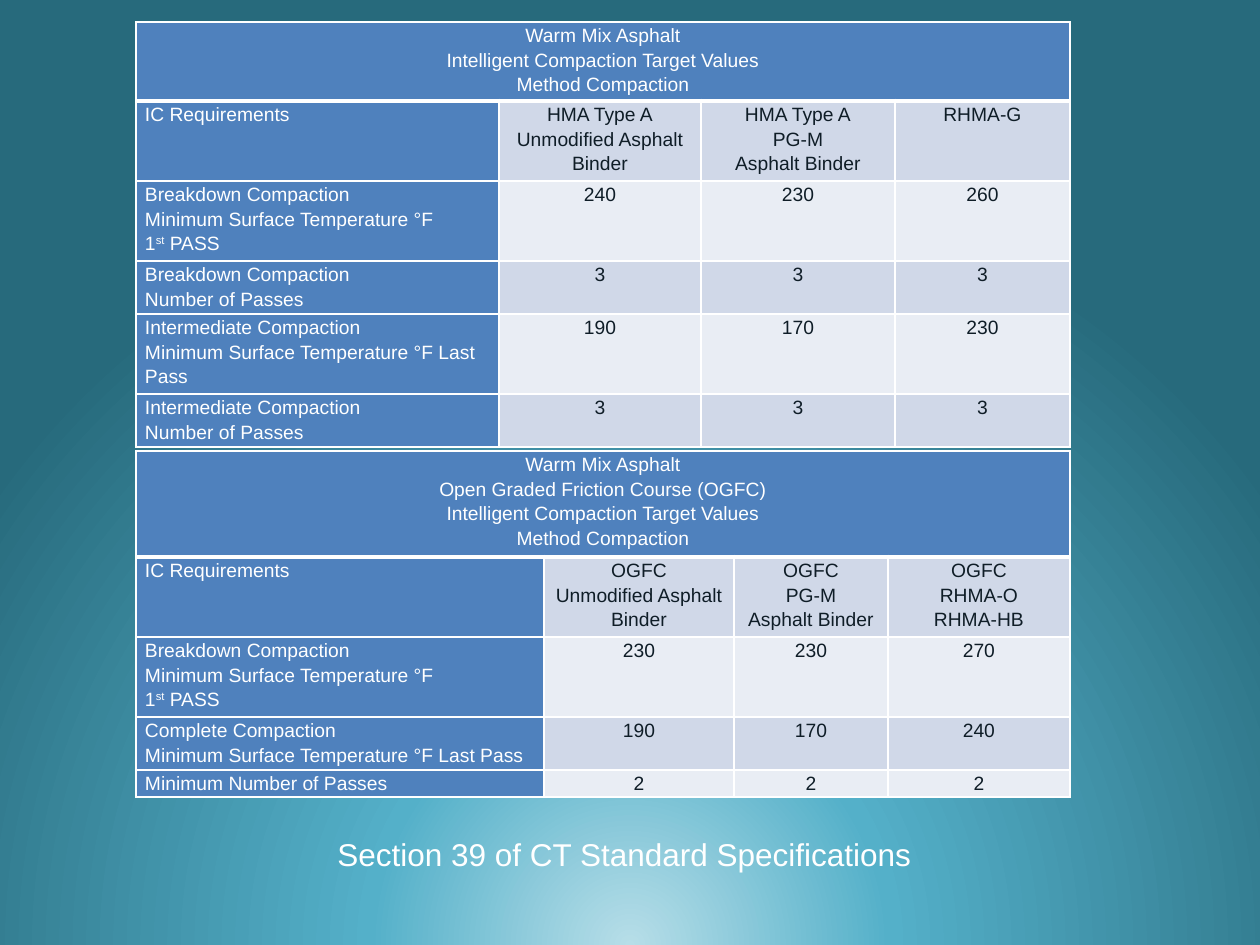
from pptx import Presentation
from pptx.dml.color import RGBColor
from pptx.enum.text import MSO_AUTO_SIZE, PP_ALIGN
from pptx.oxml import parse_xml
from pptx.util import Emu, Pt

CENTER, LEFT = PP_ALIGN.CENTER, PP_ALIGN.LEFT
GROW = MSO_AUTO_SIZE.SHAPE_TO_FIT_TEXT
NS = 'xmlns:a="http://schemas.openxmlformats.org/drawingml/2006/main"'
NS_P = 'xmlns:p="http://schemas.openxmlformats.org/presentationml/2006/main"'
EMU_PER_PX = 914400 / 126
FONT = "Arial"
COLORS = {
    "white": "FFFFFF", "ink": "0F1D27", "head": "4F81BD",
    "band_dark": "D0D8E8", "band_light": "E9EDF4",
    "glow": "B7DEE8", "mid": "54B0C9", "edge": "276A7C",
}
CELL_MARGINS = {"margin_left": 9, "margin_right": 9,
                "margin_top": 0, "margin_bottom": 0}

# Text between carets is superscript.
FIRST_PASS = "Breakdown Compaction\nMinimum Surface Temperature °F\n1^st^ PASS"
LAST_PASS = "Minimum Surface Temperature °F Last Pass"

COMPACTION = {
    "top": 22,
    "cols": [363, 202, 194, 175],
    "heights": [79, 80, 80, 53, 80, 53],
    "rows": [
        ["Warm Mix Asphalt\nIntelligent Compaction Target Values\nMethod Compaction"],
        ["IC Requirements", "HMA Type A\nUnmodified Asphalt Binder",
         "HMA Type A\nPG-M\nAsphalt Binder", "RHMA-G"],
        [FIRST_PASS, "240", "230", "260"],
        ["Breakdown Compaction\nNumber of Passes", "3", "3", "3"],
        ["Intermediate Compaction\n" + LAST_PASS, "190", "170", "230"],
        ["Intermediate Compaction\nNumber of Passes", "3", "3", "3"],
    ],
}
FRICTION_COURSE = {
    "top": 451,
    "cols": [408, 190, 154, 182],
    "heights": [106, 80, 80, 53, 27],
    "rows": [
        ["Warm Mix Asphalt\nOpen Graded Friction Course (OGFC)\n"
         "Intelligent Compaction Target Values\nMethod Compaction"],
        ["IC Requirements", "OGFC\nUnmodified Asphalt Binder",
         "OGFC\nPG-M\nAsphalt Binder", "OGFC\nRHMA-O\nRHMA-HB"],
        [FIRST_PASS, "230", "230", "270"],
        ["Complete Compaction\n" + LAST_PASS, "190", "170", "240"],
        ["Minimum Number of Passes", "2", "2", "2"],
    ],
}


def px(n):
    return Emu(round(n * EMU_PER_PX))


def rgb(name):
    return RGBColor.from_string(COLORS[name])


def set_background(s):
    """Radial glow centred below the bottom edge of the slide."""
    stops = "".join(
        f'<a:gs pos="{pos}"><a:srgbClr val="{COLORS[name]}"/></a:gs>'
        for pos, name in ((0, "glow"), (33000, "mid"), (100000, "edge")))
    s.element.cSld.insert(0, parse_xml(
        f'<p:bg {NS} {NS_P}><p:bgPr><a:gradFill rotWithShape="1">'
        f'<a:gsLst>{stops}</a:gsLst><a:path path="circle">'
        '<a:fillToRect l="50000" t="130000" r="50000" b="-30000"/></a:path>'
        '</a:gradFill><a:effectLst/></p:bgPr></p:bg>'))


def add_run(p, text, size, color):
    r = p.add_run()
    r.text = text
    for name, value in {"name": FONT, "size": Pt(size)}.items():
        setattr(r.font, name, value)
    r.font.color.rgb = rgb(color)
    return r


def write_cell(cell, text, color, align):
    tf = cell.text_frame
    for i, line in enumerate(text.split("\n")):
        p = tf.paragraphs[0] if i == 0 else tf.add_paragraph()
        p.alignment, p.line_spacing = align, 1.15
        for j, part in enumerate(line.split("^")):
            r = add_run(p, part, 11, color)
            if j % 2:
                r.font.size = Pt(11)
                r._r.get_or_add_rPr().set("baseline", "30000")


def style_cell(cell, fill, bottom=1):
    for name, value in CELL_MARGINS.items():
        setattr(cell, name, px(value))
    tcPr = cell._tc.get_or_add_tcPr()
    for side, width in (("L", 1), ("R", 1), ("T", 1), ("B", bottom)):
        tcPr.append(parse_xml(
            f'<a:ln{side} {NS} w="{Pt(width)}"><a:solidFill>'
            f'<a:srgbClr val="{COLORS["white"]}"/></a:solidFill></a:ln{side}>'))
    cell.fill.solid()
    cell.fill.fore_color.rgb = rgb(fill)


def add_spec_table(s, top, cols, heights, rows):
    """Table with a merged heading, a coloured first column and banded values."""
    frame = s.shapes.add_table(len(rows), len(cols), px(136), px(top),
                               px(sum(cols)), px(sum(heights)))
    table = frame.table
    table.first_row = table.horz_banding = False
    for column, width in zip(table.columns, cols):
        column.width = px(width)
    for row, height in zip(table.rows, heights):
        row.height = px(height)

    table.cell(0, 0).merge(table.cell(0, len(cols) - 1))
    for i, texts in enumerate(rows):
        band = "band_dark" if i % 2 else "band_light"
        for j in range(len(cols)):
            is_head = i == 0 or j == 0
            cell = table.cell(i, j)
            style_cell(cell, "head" if is_head else band, 1 if i else 3)
            if j < len(texts):
                write_cell(cell, texts[j], "white" if is_head else "ink",
                           LEFT if i and j == 0 else CENTER)


def add_caption(s, text):
    sp = s.shapes.add_textbox(px(325), px(829), px(651), px(51))
    tf = sp.text_frame
    for name, value in {"word_wrap": True, "auto_size": GROW}.items():
        setattr(tf, name, value)
    add_run(tf.paragraphs[0], text, 18, "white")


def main():
    prs = Presentation()
    prs.slide_width, prs.slide_height = px(1260), px(945)
    s = prs.slides.add_slide(prs.slide_layouts[6])
    set_background(s)
    for spec in (COMPACTION, FRICTION_COURSE):
        add_spec_table(s, **spec)
    add_caption(s, "Section 39 of CT Standard Specifications")
    prs.save("out.pptx")


if __name__ == "__main__":
    main()
